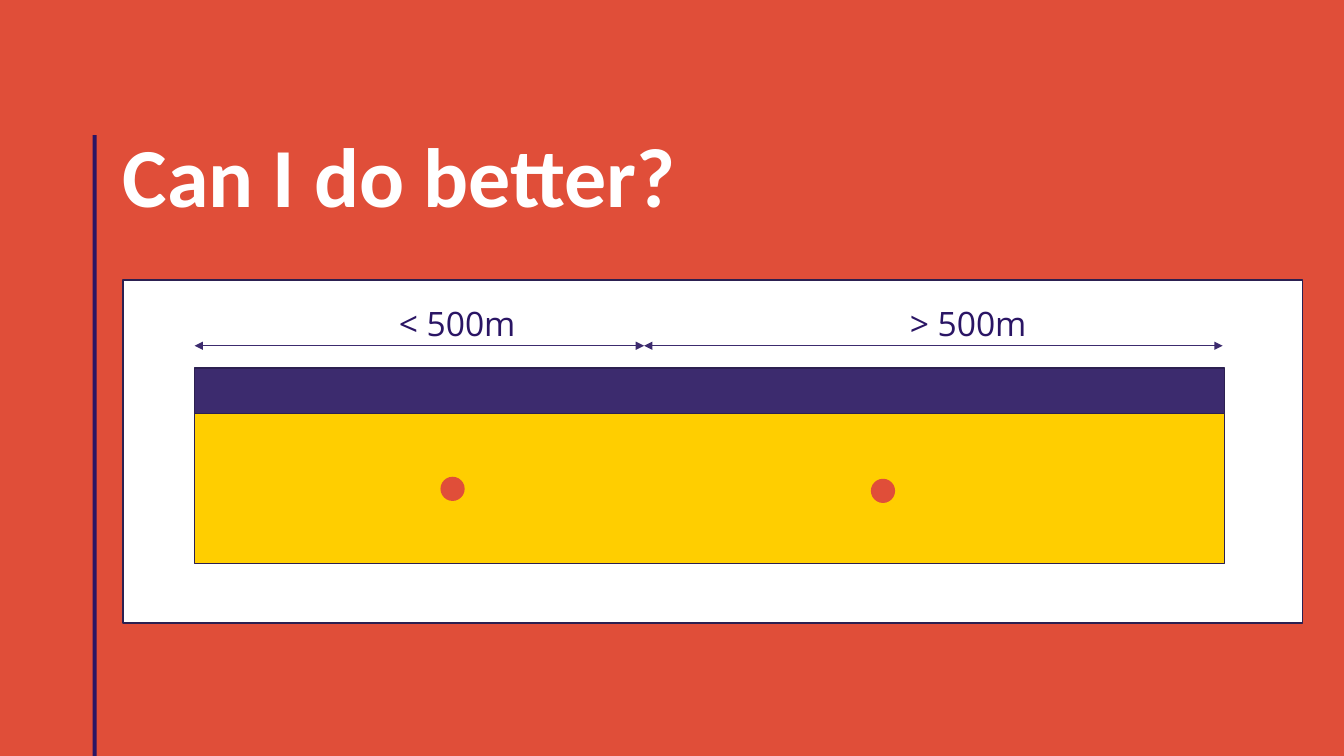
from lxml import etree
from pptx import Presentation
from pptx.dml.color import RGBColor
from pptx.enum import shapes, text
from pptx.oxml.ns import qn
from pptx.util import Pt

RED, WHITE, YELLOW = "E04E39", "FFFFFF", "FFCE00"
NAVY, PURPLE, OUTLINE = "2A1564", "3C2B6E", "2C2051"
LEFT, WIDTH = 138.96, 735.84  # beach and sea strip


def rgb(value):
    return RGBColor.from_string(value)


def add_box(s, kind, x, y, w, h, fill, line=None):
    sp = s.shapes.add_shape(kind, Pt(x), Pt(y), Pt(w), Pt(h))
    sp.shadow.inherit = False
    sp.fill.solid()
    sp.fill.fore_color.rgb = rgb(fill)
    if line:
        sp.line.color.rgb = rgb(line)
        sp.line.width = Pt(1)
    else:
        sp.line.fill.background()
    return sp


def add_text(s, words, x, y, w, h, font, size, color, bold=False,
             align=text.PP_ALIGN.LEFT):
    tf = s.shapes.add_textbox(Pt(x), Pt(y), Pt(w), Pt(h)).text_frame
    tf.word_wrap = True
    tf.margin_left = tf.margin_top = tf.margin_right = tf.margin_bottom = 0
    p = tf.paragraphs[0]
    p.alignment = align
    p.line_spacing = 0.9
    r = p.add_run()
    r.text = words
    r.font.name = font
    r.font.size = Pt(size)
    r.font.bold = bold
    r.font.color.rgb = rgb(color)


def add_span(s, x1, x2, y):
    """Draw a horizontal measure with an arrowhead at each end."""
    c = s.shapes.add_connector(shapes.MSO_CONNECTOR.STRAIGHT,
                               Pt(x1), Pt(y), Pt(x2), Pt(y))
    c.line.color.rgb = rgb(PURPLE)
    c.line.width = Pt(0.5)
    ln = c.line._get_or_add_ln()
    for end in ("a:headEnd", "a:tailEnd"):
        etree.SubElement(ln, qn(end), type="triangle")
    etree.SubElement(c._element.spPr, qn("a:effectLst"))


def main():
    prs = Presentation()
    prs.slide_width, prs.slide_height = Pt(960), Pt(540)
    s = prs.slides.add_slide(prs.slide_layouts[6])
    s.background.fill.solid()
    s.background.fill.fore_color.rgb = rgb(RED)
    rect, oval = shapes.MSO_SHAPE.RECTANGLE, shapes.MSO_SHAPE.OVAL

    # Title with side rule
    add_box(s, rect, 66.24, 96.48, 2.88, 443.52, NAVY)
    add_text(s, "Can I do better?", 87.84, 96.48, 828, 92.16,
             "Calibri", 60, WHITE, bold=True)

    # Panel with the two bands
    add_box(s, rect, 87.84, 200.16, 842.4, 244.8, WHITE, OUTLINE)
    add_box(s, rect, LEFT, 262.8, WIDTH, 132.48, PURPLE, OUTLINE)
    add_box(s, rect, LEFT, 295.2, WIDTH, 107.28, YELLOW, OUTLINE)

    # Measures, labels and dots
    for x1, x2, label, label_x, dot_x, dot_y in (
            (LEFT, 460.08, "< 500m", 211.68, 314.64, 340.56),
            (460.08, 873.36, "> 500m", 576.72, 622.08, 342)):
        add_span(s, x1, x2, 246.96)
        add_text(s, label, label_x, 219.6, 229.68, 41.76,
                 "Open Sans", 24, NAVY, align=text.PP_ALIGN.CENTER)
        add_box(s, oval, dot_x, dot_y, 17.28, 17.28, RED)

    prs.save("out.pptx")


if __name__ == "__main__":
    main()
